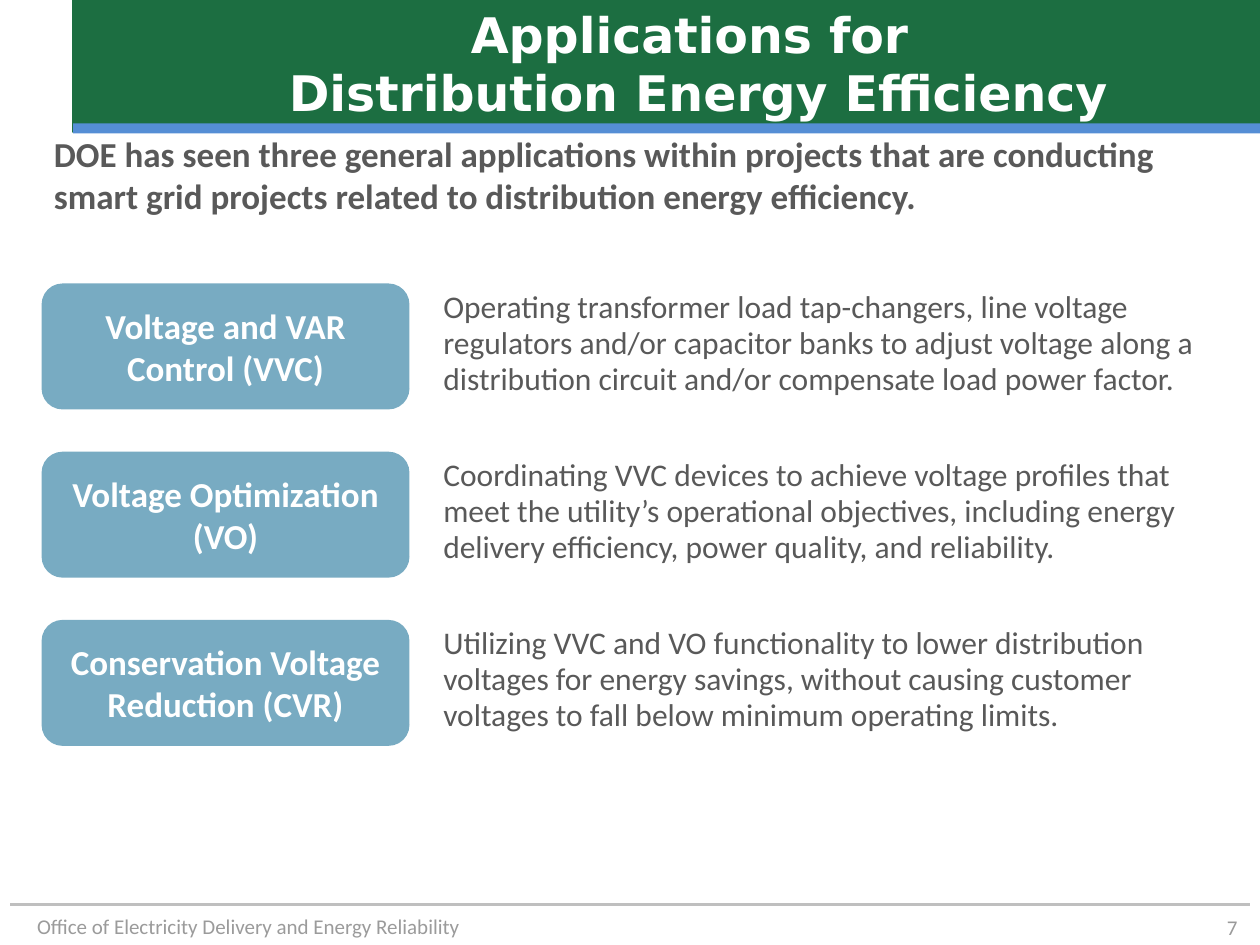
import pptx
import pptx.util
import pptx.dml.color
import pptx.enum.shapes
import pptx.enum.text
import pptx.oxml.ns
import lxml.etree

Inches = pptx.util.Inches
Pt = pptx.util.Pt
Shape = pptx.enum.shapes.MSO_SHAPE
Align = pptx.enum.text.PP_ALIGN
Anchor = pptx.enum.text.MSO_ANCHOR


def color(code):
    return pptx.dml.color.RGBColor.from_string(code)


class Deck:
    font = "Calibri"
    gray = "595959"
    white = "FFFFFF"

    def __init__(self, slide):
        self.slide = slide

    def fill_in(self, frame, lines, size, tint, bold=False, align=Align.LEFT,
                anchor=Anchor.TOP, font=None, space=None):
        frame.word_wrap = True
        frame.vertical_anchor = anchor
        para = frame.paragraphs[0]
        para.alignment = align
        if space:
            para.line_spacing = space
        for index, line in enumerate(lines):
            if index:
                para.add_line_break()
            run = para.add_run()
            run.text = line
            run.font.name = font or self.font
            run.font.size = Pt(size)
            run.font.bold = bold
            run.font.color.rgb = color(tint)

    def text(self, box, lines, size, tint, **style):
        frame = self.slide.shapes.add_textbox(*map(Inches, box)).text_frame
        self.fill_in(frame, lines, size, tint, **style)
        return frame

    def block(self, kind, box, fill, edge=None):
        shape = self.slide.shapes.add_shape(kind, *map(Inches, box))
        shape.shadow.inherit = False
        shape.fill.solid()
        shape.fill.fore_color.rgb = color(fill)
        if edge:
            shape.line.color.rgb = color(edge)
            shape.line.width = Pt(1)
        else:
            shape.line.fill.background()
        return shape

    def label(self, box, words):
        frame = self.block(Shape.ROUNDED_RECTANGLE, box, "78ABC2").text_frame
        frame.margin_top = frame.margin_bottom = Inches(0.1)
        self.fill_in(frame, [words], 20, self.white, bold=True,
                     align=Align.CENTER, anchor=Anchor.MIDDLE)

    def rule(self, left, right, top, tint):
        line = self.slide.shapes.add_connector(
            pptx.enum.shapes.MSO_CONNECTOR.STRAIGHT,
            Inches(left), Inches(top), Inches(right), Inches(top))
        line.line.color.rgb = color(tint)
        line.line.width = Pt(1.75)
        lxml.etree.SubElement(line._element.spPr, pptx.oxml.ns.qn("a:effectLst"))


def main():
    show = pptx.Presentation()
    show.slide_width = Inches(10)
    show.slide_height = Inches(7.5)
    deck = Deck(show.slides.add_slide(show.slide_layouts[6]))

    deck.block(Shape.RECTANGLE, (0.58, 0, 9.42, 1.05), "1C6E41", "1C6E41")
    deck.block(Shape.RECTANGLE, (0.58, 0.98, 9.42, 0.08), "558ED5")
    deck.text((0, 7.2, 3.75, 0.3),
              ["Office of Electricity Delivery and Energy Reliability"],
              12, "9B9B9B", align=Align.RIGHT)
    deck.rule(0.08, 9.92, 7.18, "BFBFBF")
    page = deck.text((7.42, 7.21, 2.5, 0.29), ["7"], 12, "9A9A9A",
                     align=Align.RIGHT, anchor=Anchor.MIDDLE)
    page.margin_left = page.margin_top = page.margin_bottom = 0

    deck.text((1.08, 0, 8.92, 1),
              ["Applications for ", "Distribution Energy Efficiency"],
              28, deck.white, bold=True, align=Align.CENTER,
              anchor=Anchor.MIDDLE, font="DejaVu Sans")
    deck.text((0.33, 1, 9.3, 0.67),
              ["DOE has seen three general applications within projects that "
               "are conducting smart grid projects related to distribution "
               "energy efficiency."], 20, deck.gray, bold=True)

    items = [
        ("Voltage and VAR Control (VVC)",
         "Operating transformer load tap-changers, line voltage regulators "
         "and/or capacitor banks to adjust voltage along a distribution "
         "circuit and/or compensate load power factor."),
        ("Voltage Optimization (VO)",
         "Coordinating VVC devices to achieve voltage profiles that meet the "
         "utility’s operational objectives, including energy delivery "
         "efficiency, power quality, and reliability."),
        ("Conservation Voltage Reduction (CVR)",
         "Utilizing VVC and VO functionality to lower distribution voltages "
         "for energy savings, without causing customer voltages to fall below "
         "minimum operating limits."),
    ]
    first, last = 2.25, 4.92
    step = (last - first) / (len(items) - 1)
    for index, (name, detail) in enumerate(items):
        top = first + index * step
        deck.label((0.33, top, 2.92, 1), name)
        deck.text((3.42, top, 6.25, 1), [detail], 18, deck.gray, space=0.95)

    show.save("out.pptx")


if __name__ == "__main__":
    main()
